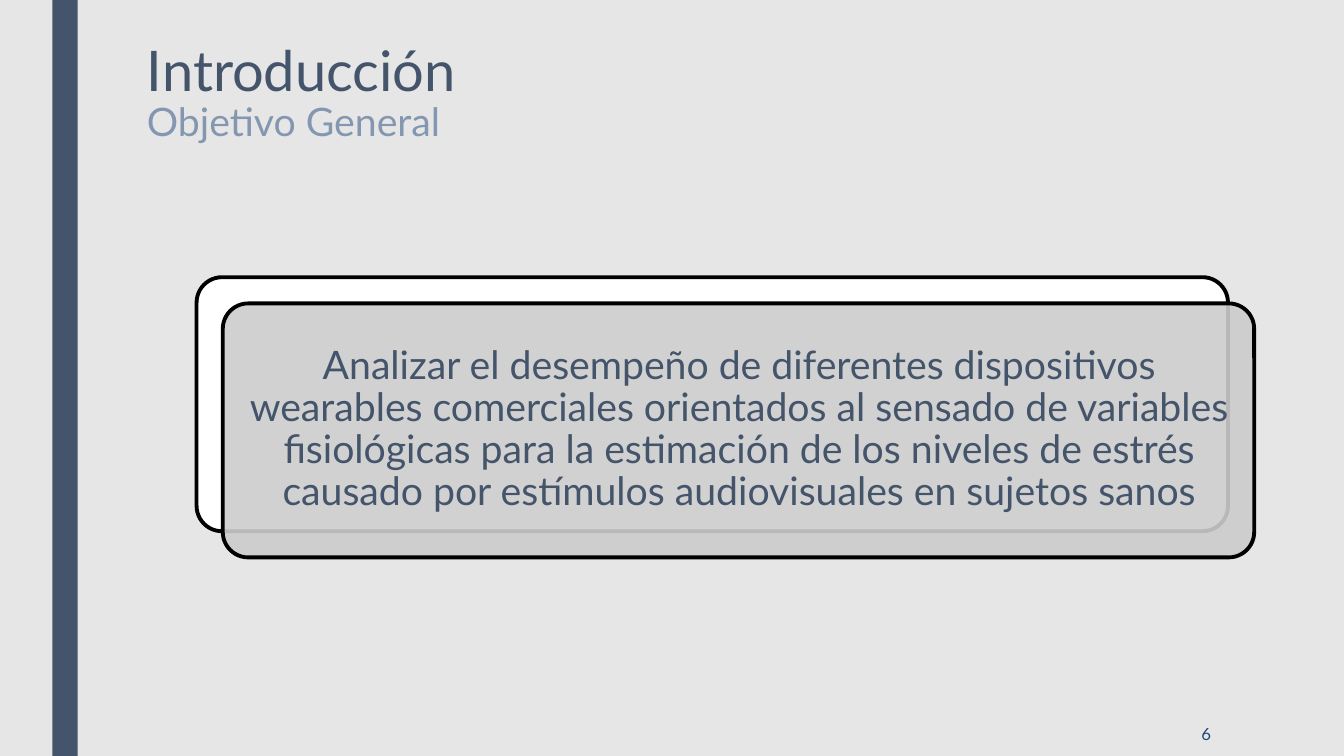
from lxml import etree
from pptx import Presentation
from pptx.dml.color import RGBColor
from pptx.enum.shapes import MSO_SHAPE
from pptx.enum.text import MSO_ANCHOR, PP_ALIGN
from pptx.oxml.ns import qn
from pptx.util import Inches, Pt

RECTANGLE = MSO_SHAPE.RECTANGLE
ROUNDED = MSO_SHAPE.ROUNDED_RECTANGLE
TOP, MIDDLE = MSO_ANCHOR.TOP, MSO_ANCHOR.MIDDLE
LEFT, CENTER, RIGHT = PP_ALIGN.LEFT, PP_ALIGN.CENTER, PP_ALIGN.RIGHT

BACKGROUND = RGBColor(0xE7, 0xE6, 0xE6)
SLATE = RGBColor(0x44, 0x54, 0x6A)
SOFT_BLUE = RGBColor(0x84, 0x97, 0xB0)
NAVY = RGBColor(0x1F, 0x49, 0x7D)
WHITE = RGBColor(0xFF, 0xFF, 0xFF)
GRAY = RGBColor(0xCC, 0xCC, 0xCC)
BLACK = RGBColor(0x00, 0x00, 0x00)

FONT = "Lato"
TITLE = "Introducción"
SUBTITLE = "Objetivo General"
OBJECTIVE = (
    "Analizar el desempeño de diferentes dispositivos wearables comerciales "
    "orientados al sensado de variables fisiológicas para la estimación de los "
    "niveles de estrés causado por estímulos audiovisuales en sujetos sanos"
)
PAGE_NUMBER = "6"

CARD_LEFT, CARD_TOP, CARD_WIDTH, CARD_HEIGHT = 1.95, 2.75, 10.23, 2.52
CARD_OFFSET = 0.26
CARDS = [(WHITE, 100), (GRAY, 90)]

TEXTS = [
    ((1.36, 0.38, 10.5, 1.62), [(TITLE, 40, SLATE), (SUBTITLE, 28, SOFT_BLUE)],
     LEFT, TOP, 0.89, (0.1, 0.05)),
    ((10.36, 7.06, 1.75, 0.44), [(PAGE_NUMBER, 12, NAVY)],
     RIGHT, MIDDLE, 1.0, (0.1, 0.05)),
    ((2.29, 3.08, 10.08, 2.37), [(OBJECTIVE, 28, SLATE)],
     CENTER, MIDDLE, 0.89, (0.12, 0.12)),
]


def add_box(slide, kind, box, color):
    shape = slide.shapes.add_shape(kind, *map(Inches, box))
    shape.shadow.inherit = False
    shape.fill.solid()
    shape.fill.fore_color.rgb = color
    shape.line.fill.background()
    return shape


def add_card(slide, index, color, opacity):
    shift = index * CARD_OFFSET
    box = (CARD_LEFT + shift, CARD_TOP + shift, CARD_WIDTH, CARD_HEIGHT)
    card = add_box(slide, ROUNDED, box, color)
    card.adjustments[0] = 0.1
    card.line.color.rgb = BLACK
    card.line.width = Pt(2.75)
    if opacity < 100:
        fill_color = card.fill._xPr.find(qn("a:solidFill"))[0]
        etree.SubElement(fill_color, qn("a:alpha"), val=str(opacity * 1000))


def add_text(slide, box, lines, alignment, anchor, spacing, insets):
    frame = slide.shapes.add_textbox(*map(Inches, box)).text_frame
    frame.word_wrap = True
    frame.vertical_anchor = anchor
    frame.margin_left = frame.margin_right = Inches(insets[0])
    frame.margin_top = frame.margin_bottom = Inches(insets[1])
    paragraph = frame.paragraphs[0]
    paragraph.text = "\v".join(text for text, size, color in lines)
    paragraph.alignment = alignment
    paragraph.line_spacing = spacing
    for run, (text, size, color) in zip(paragraph.runs, lines):
        run.font.name = FONT
        run.font.size = Pt(size)
        run.font.color.rgb = color


def main():
    presentation = Presentation()
    presentation.slide_width = Inches(13.33)
    presentation.slide_height = Inches(7.5)
    slide = presentation.slides.add_slide(presentation.slide_layouts[6])
    slide.background.fill.solid()
    slide.background.fill.fore_color.rgb = BACKGROUND

    add_box(slide, RECTANGLE, (0.52, 0, 0.25, 7.5), SLATE)
    for index, (color, opacity) in enumerate(CARDS):
        add_card(slide, index, color, opacity)
    for text in TEXTS:
        add_text(slide, *text)

    presentation.save("out.pptx")


if __name__ == "__main__":
    main()
